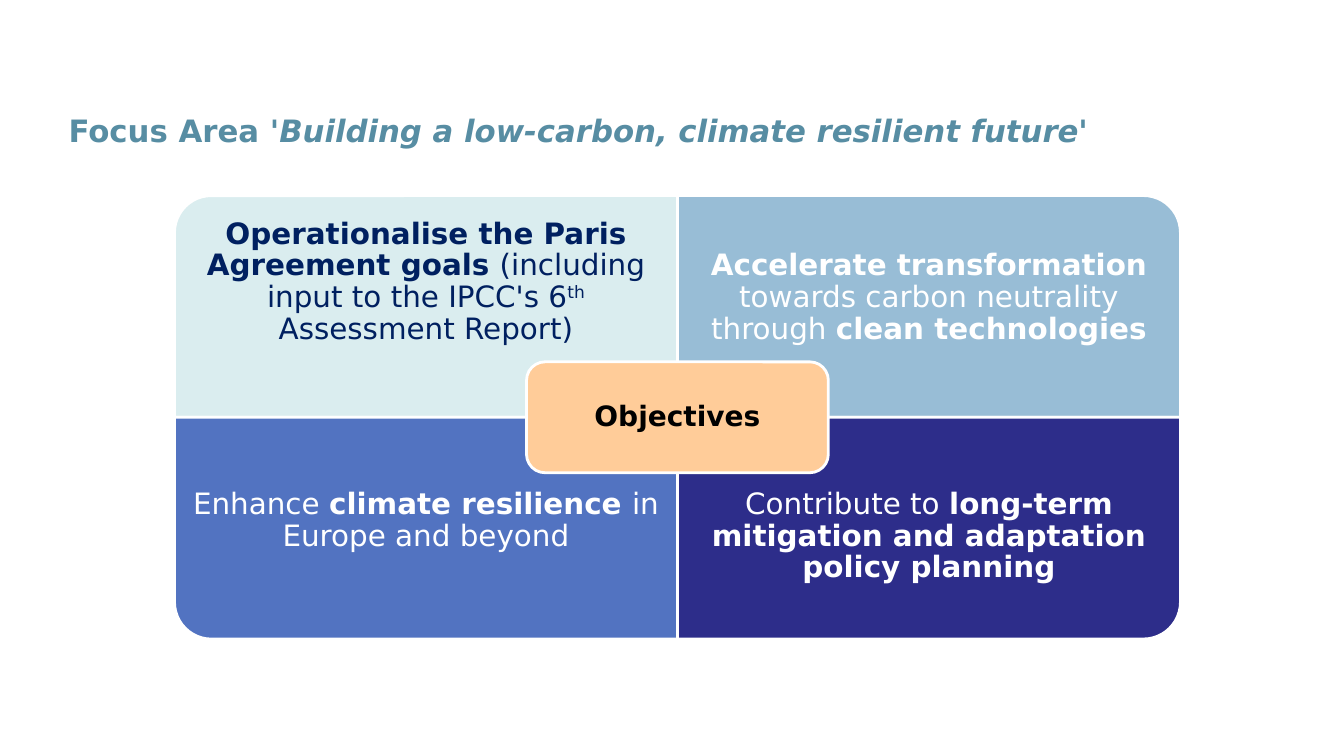
from pptx import Presentation
from pptx.dml.color import RGBColor
from pptx.enum.shapes import MSO_SHAPE as Shape
from pptx.enum.text import MSO_ANCHOR as Anchor, MSO_AUTO_SIZE as Auto, PP_ALIGN as Align
from pptx.util import Pt

FONT = "DejaVu Sans"


def color(code):
    return RGBColor.from_string(code)


def write(frame, runs, size, ink, align=Align.CENTER, anchor=Anchor.MIDDLE,
          inset=(0, 0, 0, 0), line=0.9):
    """Fill a frame with (text, style) runs; style letters: b, i, ^ (raised)."""
    frame.word_wrap = True
    frame.auto_size = Auto.NONE
    frame.vertical_anchor = anchor
    (frame.margin_left, frame.margin_top,
     frame.margin_right, frame.margin_bottom) = map(Pt, inset)
    para = frame.paragraphs[0]
    para.alignment = align
    para.line_spacing = line
    para.space_before = Pt(0)
    for text, style in runs:
        run = para.add_run()
        run.text = text
        font = run.font
        font.name, font.size = FONT, Pt(size)
        font.bold, font.italic = "b" in style, "i" in style
        font.color.rgb = color(ink)
        if "^" in style:
            run._r.get_or_add_rPr().set("baseline", "30000")


def label(slide, box, runs, **form):
    text = slide.shapes.add_textbox(*map(Pt, box))
    write(text.text_frame, runs, **form)


def panel(slide, kind, box, fill, turn=0):
    """Draw a white-edged shape that covers the box after its turn."""
    x, y, w, h = box
    if turn % 180:
        x, y, w, h = x + (w - h) / 2, y + (h - w) / 2, h, w
    shape = slide.shapes.add_shape(kind, *map(Pt, (x, y, w, h)))
    shape.rotation = turn
    shape.shadow.inherit = False
    shape.fill.solid()
    shape.fill.fore_color.rgb = color(fill)
    shape.line.color.rgb = color("FFFFFF")
    shape.line.width = Pt(2)


def head(slide, box, runs):
    title = slide.shapes.title
    title.left, title.top, title.width, title.height = map(Pt, box)
    # The deep bottom inset lifts the line above the middle
    write(title.text_frame, runs, size=22, ink="578DA3", align=Align.LEFT,
          inset=(7.2, 3.6, 7.2, 29.3), line=1.0)


def matrix(slide, box, cells, hub):
    left, top, width, height = box
    w, h = width / 2, height / 2
    deep = h * 0.75  # text keeps clear of the hub

    # Four quadrants, each with its outer corner rounded
    for i, (fill, ink, turn, runs) in enumerate(cells):
        row, col = divmod(i, 2)
        x, y = left + col * w, top + row * h
        panel(slide, Shape.ROUND_1_RECTANGLE, (x, y, w, h), fill, turn)
        label(slide, (x, y + row * (h - deep), w, deep), runs, size=21, ink=ink,
              anchor=Anchor.TOP if row else Anchor.BOTTOM, inset=(11.5,) * 4)

    # Hub over the centre
    hw, hh, pad = w * 0.6, h / 2, 4
    x, y = left + w - hw / 2, top + h - hh / 2
    panel(slide, Shape.ROUNDED_RECTANGLE, (x, y, hw, hh), "FFCC99")
    label(slide, (x + pad, y + pad, hw - 2 * pad, hh - 2 * pad), hub,
          size=20, ink="000000", inset=(5.8,) * 4)


CELLS = [
    ("DAEDEF", "002060", 270, [
        ("Operationalise the Paris Agreement goals ", "b"),
        ("(including input to the IPCC's 6", ""), ("th", "^"),
        (" Assessment Report)", "")]),
    ("98BDD6", "FFFFFF", 0, [
        ("Accelerate transformation ", "b"),
        ("towards carbon neutrality through ", ""),
        ("clean technologies", "b")]),
    ("5273C1", "FFFFFF", 180, [
        ("Enhance ", ""), ("climate resilience ", "b"),
        ("in Europe and beyond", "")]),
    ("2D2D8A", "FFFFFF", 90, [
        ("Contribute to ", ""),
        ("long-term mitigation and adaptation policy planning", "b")]),
]


def main():
    deck = Presentation()
    deck.slide_width, deck.slide_height = Pt(960), Pt(540)
    slide = deck.slides.add_slide(deck.slide_layouts[5])
    head(slide, (41.8, 82.8, 892, 45.4), [
        ("Focus Area '", "b"),
        ("Building a low-carbon, climate resilient future'", "bi")])
    matrix(slide, (124.6, 139.7, 718.6, 316.8), CELLS, [("Objectives", "b")])
    deck.save("out.pptx")


if __name__ == "__main__":
    main()
